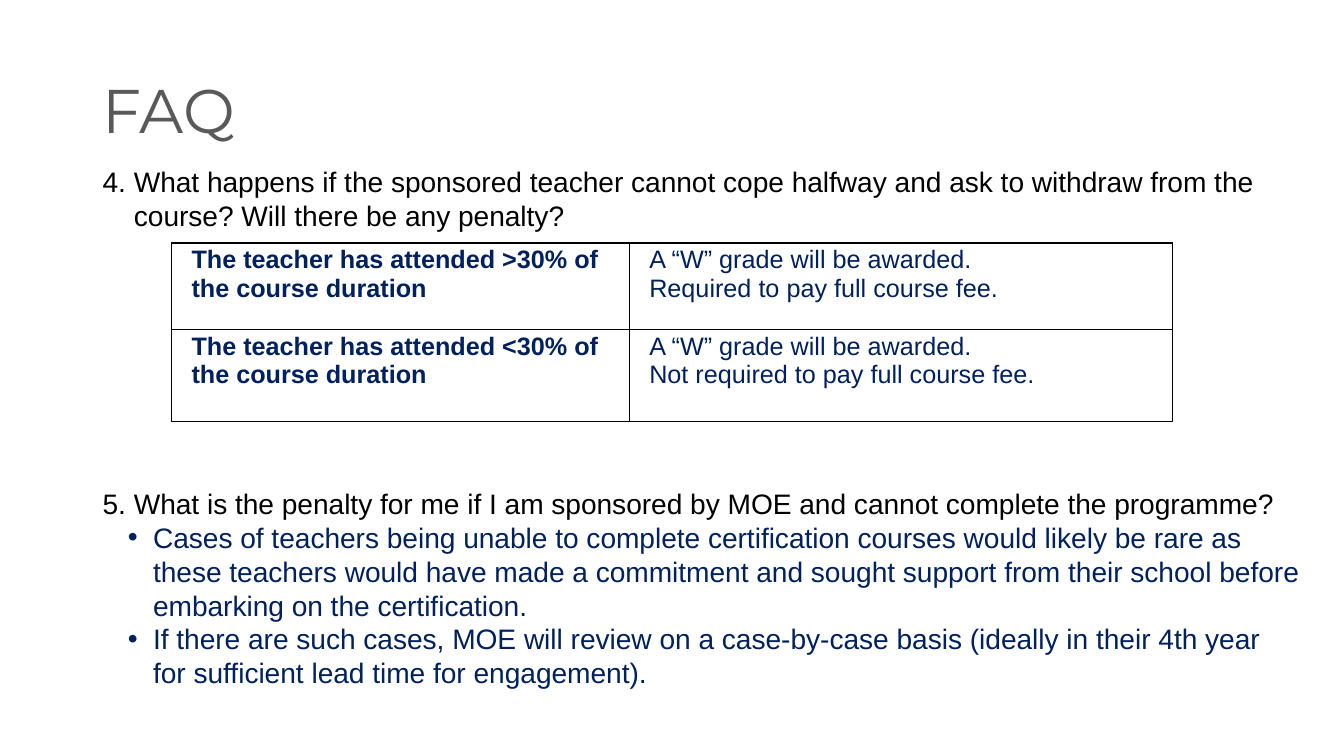
from lxml import etree
from pptx import Presentation
from pptx.dml.color import RGBColor
from pptx.enum.text import MSO_ANCHOR
from pptx.oxml.ns import qn
from pptx.util import Inches, Pt

MIDDLE, TOP = MSO_ANCHOR.MIDDLE, MSO_ANCHOR.TOP
WIDE, HIGH = 13.33, 7.5
LEFT, BODY = 0.92, 12.07
COLS, ROWS = (4.54, 5.39), (0.86, 0.91)
COLORS = {"title": "595959", "ask": "000000", "reply": "002060", "line": "000000"}

FOUR = ("4. What happens if the sponsored teacher cannot cope halfway and ask "
        "to withdraw from the course? Will there be any penalty?")
FIVE = ("5. What is the penalty for me if I am sponsored by MOE and cannot "
        "complete the programme?")
REPLIES = (
    "Cases of teachers being unable to complete certification courses would "
    "likely be rare as these teachers would have made a commitment and sought "
    "support from their school before embarking on the certification.",
    "If there are such cases, MOE will review on a case-by-case basis (ideally "
    "in their 4th year for sufficient lead time for engagement).",
)
RULES = (
    ("The teacher has attended >30% of the course duration",
     "A “W” grade will be awarded.\nRequired to pay full course fee."),
    ("The teacher has attended <30% of the course duration",
     "A “W” grade will be awarded.\nNot required to pay full course fee."),
)


def style(para, size, color, face="Arial", bold=False):
    for run in para.runs:
        font = run.font
        font.name, font.size, font.bold = face, Pt(size), bold
        font.color.rgb = RGBColor.from_string(COLORS[color])


def hang(para, left, back, mark=None):
    """Set a hanging indent in inches, with an optional bullet mark."""
    props = para._p.get_or_add_pPr()
    props.set("marL", str(Inches(left)))
    props.set("indent", str(-Inches(back)))
    if mark:
        etree.SubElement(props, qn("a:buFont")).set("typeface", "Arial")
        etree.SubElement(props, qn("a:buChar")).set("char", mark)


def add_box(slide, top, height, text, width=BODY, anchor=TOP):
    box = slide.shapes.add_textbox(Inches(LEFT), Inches(top), Inches(width), Inches(height))
    frame = box.text_frame
    frame.word_wrap = True
    frame.vertical_anchor = anchor
    frame.text = text
    return frame


def add_title(slide, text):
    para = add_box(slide, 0.4, 1.45, text, 11.5, MIDDLE).paragraphs[0]
    para.line_spacing = 0.9
    style(para, 44, "title", "Montserrat")


def add_faq(slide, top, height, ask, replies=()):
    frame = add_box(slide, top, height, "\n".join((ask, *replies)))
    for num, para in enumerate(frame.paragraphs):
        para.line_spacing = Pt(24.1)
        if num:
            hang(para, 0.5, 0.25, "•")
        else:
            hang(para, 0.31, 0.31)
        style(para, 20.1, "reply" if num else "ask")


def add_edges(cell):
    props = cell._tc.get_or_add_tcPr()
    for num, side in enumerate(("lnL", "lnR", "lnT", "lnB")):
        line = etree.Element(qn(f"a:{side}"), w=str(Pt(1)))
        fill = etree.SubElement(line, qn("a:solidFill"))
        etree.SubElement(fill, qn("a:srgbClr")).set("val", COLORS["line"])
        props.insert(num, line)


def add_rules(slide):
    grid = slide.shapes.add_table(
        len(ROWS), len(COLS), Inches(1.7), Inches(2.41),
        Inches(sum(COLS)), Inches(sum(ROWS))).table
    grid.first_row = grid.horz_banding = False
    for col, width in zip(grid.columns, COLS):
        col.width = Inches(width)
    for row, height, texts in zip(grid.rows, ROWS, RULES):
        row.height = Inches(height)
        for num, (cell, text) in enumerate(zip(row.cells, texts)):
            cell.fill.background()
            cell.margin_left = cell.margin_right = Inches(0.2)
            cell.margin_top, cell.margin_bottom = Inches(0.03), 0
            cell.text_frame.text = text
            for para in cell.text_frame.paragraphs:
                style(para, 18, "reply", bold=num == 0)
            add_edges(cell)


def main():
    deck = Presentation()
    deck.slide_width, deck.slide_height = Inches(WIDE), Inches(HIGH)
    slide = deck.slides.add_slide(deck.slide_layouts[6])
    add_title(slide, "FAQ")
    add_faq(slide, 1.58, 0.8, FOUR)
    add_rules(slide)
    add_faq(slide, 4.78, 2.59, FIVE, REPLIES)
    deck.save("out.pptx")


if __name__ == "__main__":
    main()
